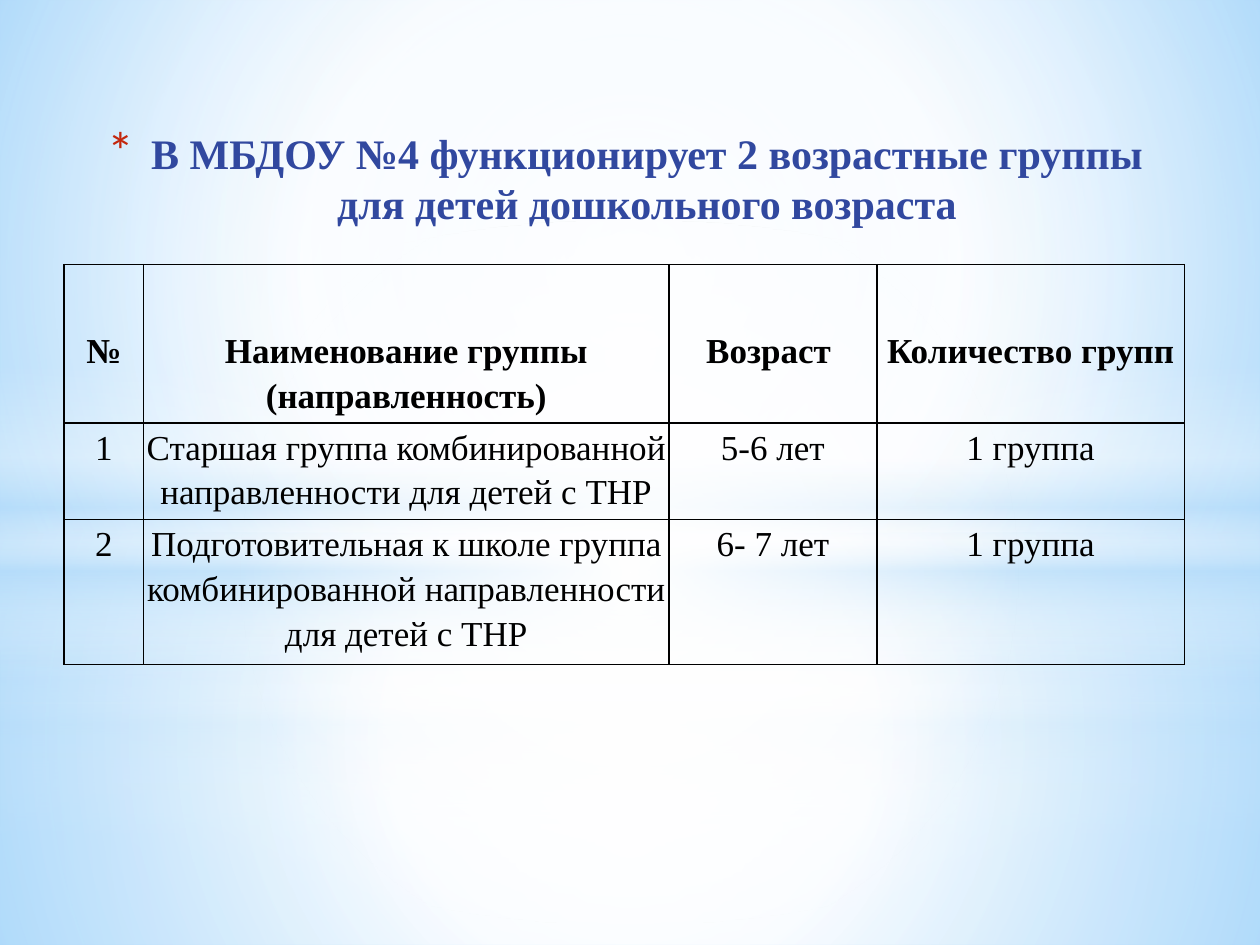
from lxml.etree import SubElement
from pptx import Presentation
from pptx.dml.color import RGBColor
from pptx.enum.shapes import MSO_SHAPE
from pptx.enum.text import MSO_ANCHOR, PP_ALIGN
from pptx.oxml.ns import qn
from pptx.util import Inches, Pt

WIDTH, HEIGHT = 10, 7.5
MARGIN, CONTENT_WIDTH = 0.51, 8.9
FONT = "Times New Roman"

WHITE = RGBColor(0xFF, 0xFF, 0xFF)
PALE_BLUE = RGBColor(0xB4, 0xDC, 0xFA)
SKY = RGBColor(0x9E, 0xD5, 0xFF)
DEEP_SKY = RGBColor(0x5B, 0xB9, 0xFF)
TITLE_BLUE = RGBColor(0x31, 0x48, 0x9F)
BULLET_RED = RGBColor(0xC3, 0x26, 0x0C)
BLACK = RGBColor(0, 0, 0)

CENTER = (50, 50, 50, 50)
# Gradient stops: position %, colour, opacity %
BAND_STOPS = [(0, WHITE, 0), (29, WHITE, 30), (45, PALE_BLUE, 40),
              (55, WHITE, 26), (65, PALE_BLUE, 60), (100, WHITE, 0)]

TITLE = "В МБДОУ №4 функционирует 2 возрастные группы для детей дошкольного возраста"
COLUMN_WIDTHS = [0.63, 4.17, 1.65, 2.44]
ROW_HEIGHTS = [1.2, 0.71, 1.06]
HEADER_INSET = 0.49
GROUPS = [
    ["№", "Наименование группы (направленность)", "Возраст ", "Количество групп"],
    ["1", "Старшая группа комбинированной направленности для детей с ТНР",
     "5-6 лет", "1 группа"],
    ["2", "Подготовительная к школе группа комбинированной направленности для детей с ТНР",
     "6- 7 лет", "1 группа"],
]


def add_node(parent, tag, **attributes):
    return SubElement(parent, qn(tag), {k: str(v) for k, v in attributes.items()})


def set_gradient(properties, stops, focus=None):
    """Replace a solid fill by a circular gradient, or a vertical one without focus."""
    solid = properties.find(qn("a:solidFill"))
    gradient = add_node(properties, "a:gradFill", rotWithShape=1)
    properties.replace(solid, gradient)
    stop_list = add_node(gradient, "a:gsLst")
    for position, color, opacity in stops:
        stop = add_node(stop_list, "a:gs", pos=position * 1000)
        tint = add_node(stop, "a:srgbClr", val=color)
        if opacity < 100:
            add_node(tint, "a:alpha", val=opacity * 1000)
    if focus:
        circle = add_node(gradient, "a:path", path="circle")
        add_node(circle, "a:fillToRect",
                 **{side: share * 1000 for side, share in zip("ltrb", focus)})
    else:
        add_node(gradient, "a:lin", ang=90 * 60000, scaled=0)


def add_glow(slide, top, height, stops, focus=CENTER, preset=MSO_SHAPE.RECTANGLE):
    glow = slide.shapes.add_shape(preset, 0, Inches(top), Inches(WIDTH), Inches(height))
    glow.shadow.inherit = False
    glow.line.fill.background()
    glow.fill.solid()
    set_gradient(glow.element.spPr, stops, focus)


def add_backdrop(slide):
    slide.background.fill.solid()
    set_gradient(slide.element.find(".//" + qn("p:bgPr")),
                 [(0, SKY, 100), (60, WHITE, 100), (100, DEEP_SKY, 100)],
                 (20, 10, 20, 60))
    # Two sets of light: horizon, band top, extra opacity, halo edge
    for horizon, band_top, extra, halo_edge in [(5.58, 4.12, 0, 56), (4.23, 2.9, 1, 54)]:
        add_glow(slide, horizon, HEIGHT - horizon,
                 [(0, WHITE, 91 + extra), (37, WHITE, 76 + extra),
                  (100, PALE_BLUE, 79 + extra)])
        add_glow(slide, 0, horizon,
                 [(0, WHITE, 89 + extra), (48, WHITE, 62 + extra),
                  (100, PALE_BLUE, 79 + extra)])
        add_glow(slide, band_top, HEIGHT / 3, BAND_STOPS, focus=None)
        add_glow(slide, 1.75, 5.58, [(0, WHITE, 100), (halo_edge, WHITE, 0)],
                 preset=MSO_SHAPE.OVAL)


def style_text(paragraph, size, color, bold):
    paragraph.alignment = PP_ALIGN.CENTER
    paragraph.font.name = FONT
    paragraph.font.size = Pt(size)
    paragraph.font.bold = bold
    paragraph.font.color.rgb = color


def add_title(slide):
    title = slide.shapes.add_textbox(Inches(MARGIN), Inches(0.92),
                                     Inches(CONTENT_WIDTH), Inches(0.94)).text_frame
    title.word_wrap = True
    title.vertical_anchor = MSO_ANCHOR.BOTTOM
    heading = title.paragraphs[0]
    heading.text = TITLE
    style_text(heading, 24, TITLE_BLUE, True)
    # Hanging asterisk bullet
    layout = add_bullet_indent(heading)
    bullet = [add_node(layout, "a:buClr"),
              add_node(layout, "a:buSzPct", val=128000),
              add_node(layout, "a:buFont", typeface="+mj-lt"),
              add_node(layout, "a:buChar", char="*")]
    add_node(bullet[0], "a:srgbClr", val=BULLET_RED)
    layout.append(layout.find(qn("a:defRPr")))


def add_bullet_indent(paragraph, indent=0.35):
    layout = paragraph._p.get_or_add_pPr()
    layout.set("marL", str(Inches(indent)))
    layout.set("indent", str(-Inches(indent)))
    return layout


def set_borders(cell):
    properties = cell._tc.get_or_add_tcPr()
    for index, side in enumerate(["a:lnL", "a:lnR", "a:lnT", "a:lnB"]):
        border = add_node(properties, side, w=Pt(1))
        add_node(add_node(border, "a:solidFill"), "a:srgbClr", val=BLACK)
        properties.insert(index, border)


def fill_cell(cell, text, is_header):
    cell.margin_left = cell.margin_right = cell.margin_bottom = 0
    cell.margin_top = Inches(HEADER_INSET if is_header else 0)
    cell.fill.background()
    cell.text = text
    entry = cell.text_frame.paragraphs[0]
    entry.line_spacing = 1.15
    style_text(entry, 20, BLACK, is_header)
    set_borders(cell)


def add_groups_table(slide):
    groups = slide.shapes.add_table(
        len(GROUPS), len(COLUMN_WIDTHS), Inches(MARGIN), Inches(2.1),
        Inches(CONTENT_WIDTH), Inches(sum(ROW_HEIGHTS))).table
    groups.first_row = groups.horz_banding = False
    for column, width in zip(groups.columns, COLUMN_WIDTHS):
        column.width = Inches(width)
    for number, (row, height) in enumerate(zip(groups.rows, ROW_HEIGHTS)):
        row.height = Inches(height)
        for cell, text in zip(row.cells, GROUPS[number]):
            fill_cell(cell, text, number == 0)


def main():
    deck = Presentation()
    deck.slide_width, deck.slide_height = Inches(WIDTH), Inches(HEIGHT)
    slide = deck.slides.add_slide(deck.slide_layouts[6])
    add_backdrop(slide)
    add_title(slide)
    add_groups_table(slide)
    deck.save("out.pptx")


if __name__ == "__main__":
    main()
